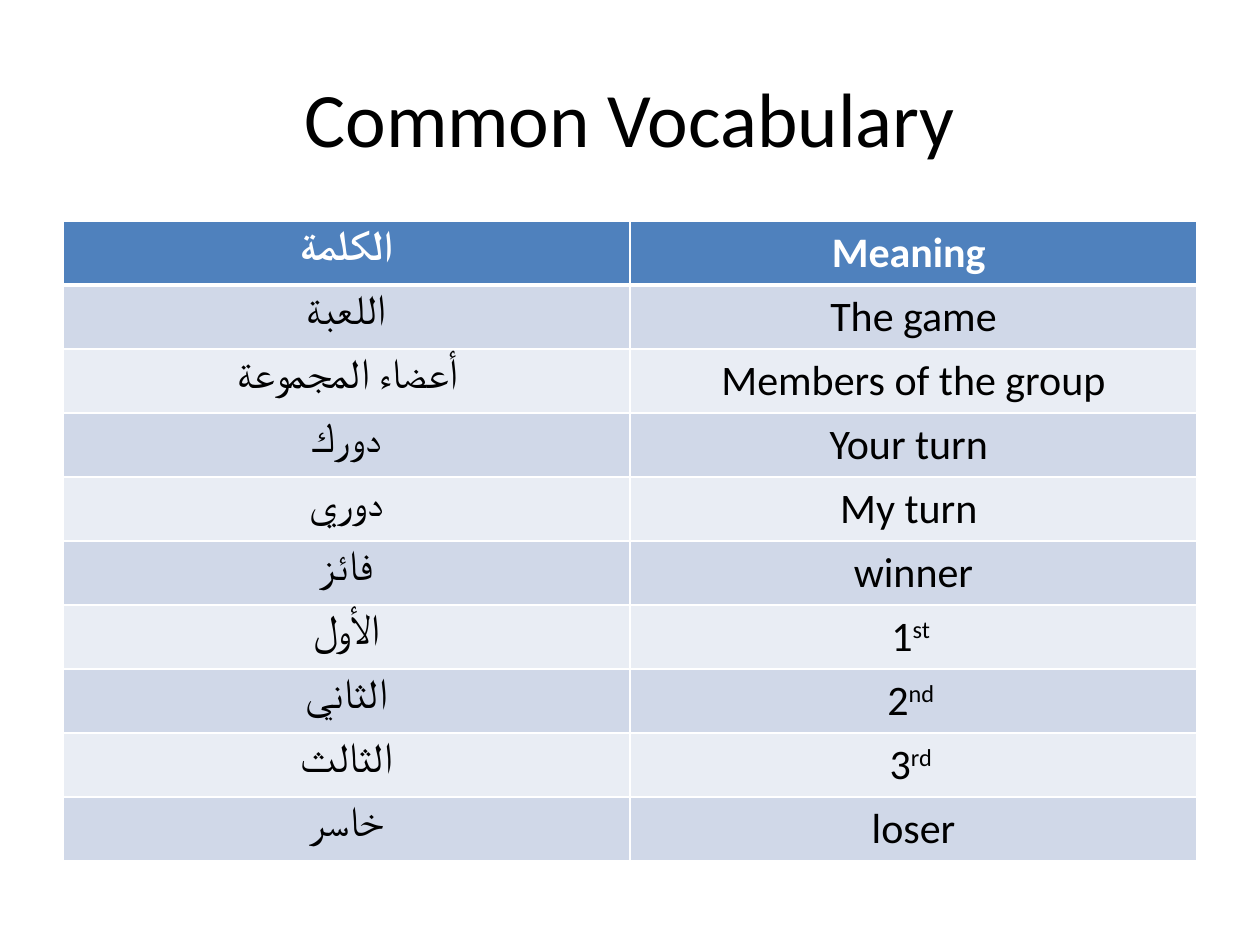
import pptx
import pptx.dml.color
import pptx.enum.text
import pptx.util
from lxml import etree

TITLE = "Common Vocabulary"
# Each meaning is a base text and a superscript ending.
VOCABULARY = [
    ("الكلمة", "Meaning ", ""),
    ("اللعبة", "The game", ""),
    ("أعضاء المجموعة", "Members of the group", ""),
    ("دورك", "Your turn ", ""),
    ("دوري", "My turn ", ""),
    ("فائز", "winner", ""),
    ("الأول", "1", "st "),
    ("الثاني", "2", "nd "),
    ("الثالث", "3", "rd "),
    ("خاسر", "loser", ""),
]

FONT = "Calibri"
WHITE, BLACK = "FFFFFF", "000000"
HEADER_FILL = "4F81BD"
BAND_FILLS = ("E9EDF4", "D0D8E8")
LEFT, WIDTH = 63, 1134
TITLE_TOP, TITLE_HEIGHT = 38, 157
TABLE_TOP, ROW_HEIGHT = 221, 64
DRAWING_NS = "http://schemas.openxmlformats.org/drawingml/2006/main"


def px(length):
    return pptx.util.Emu(round(length * 914400 / 126))


def color(hex_string):
    return pptx.dml.color.RGBColor.from_string(hex_string)


def format_paragraph(para, size, hex_color, bold=False):
    para.alignment = pptx.enum.text.PP_ALIGN.CENTER
    para.font.name = FONT
    para.font.size = pptx.util.Pt(size)
    para.font.bold = bold
    para.font.color.rgb = color(hex_color)


def add_borders(cell, bottom_points):
    properties = cell._tc.get_or_add_tcPr()
    for side, points in (("L", 1), ("R", 1), ("T", 1), ("B", bottom_points)):
        line = etree.SubElement(properties, f"{{{DRAWING_NS}}}ln{side}",
                                w=str(pptx.util.Pt(points)))
        fill = etree.SubElement(line, f"{{{DRAWING_NS}}}solidFill")
        etree.SubElement(fill, f"{{{DRAWING_NS}}}srgbClr", val=WHITE)


def fill_cell(cell, row, text, ending=""):
    header = row == 0
    add_borders(cell, 3 if header else 1)
    cell.fill.solid()
    cell.fill.fore_color.rgb = color(HEADER_FILL if header else BAND_FILLS[row % 2])
    para = cell.text_frame.paragraphs[0]
    format_paragraph(para, 24, WHITE if header else BLACK, header)
    para.add_run().text = text
    if ending:
        span = para.add_run()
        span.text = ending
        span.font._element.set("baseline", "30000")


def add_title(page):
    title = page.shapes.title
    title.left, title.top = px(LEFT), px(TITLE_TOP)
    title.width, title.height = px(WIDTH), px(TITLE_HEIGHT)
    title.text_frame.text = TITLE
    title.text_frame.vertical_anchor = pptx.enum.text.MSO_ANCHOR.MIDDLE
    format_paragraph(title.text_frame.paragraphs[0], 44, BLACK)


def add_vocabulary(page):
    count = len(VOCABULARY)
    table = page.shapes.add_table(count, 2, px(LEFT), px(TABLE_TOP),
                                  px(WIDTH), px(count * ROW_HEIGHT)).table
    for row, (word, meaning, ending) in enumerate(VOCABULARY):
        fill_cell(table.cell(row, 0), row, word)
        fill_cell(table.cell(row, 1), row, meaning, ending)


def main():
    deck = pptx.Presentation()
    deck.slide_width, deck.slide_height = px(1260), px(945)
    page = deck.slides.add_slide(deck.slide_layouts[5])
    add_title(page)
    add_vocabulary(page)
    deck.save("out.pptx")


if __name__ == "__main__":
    main()
